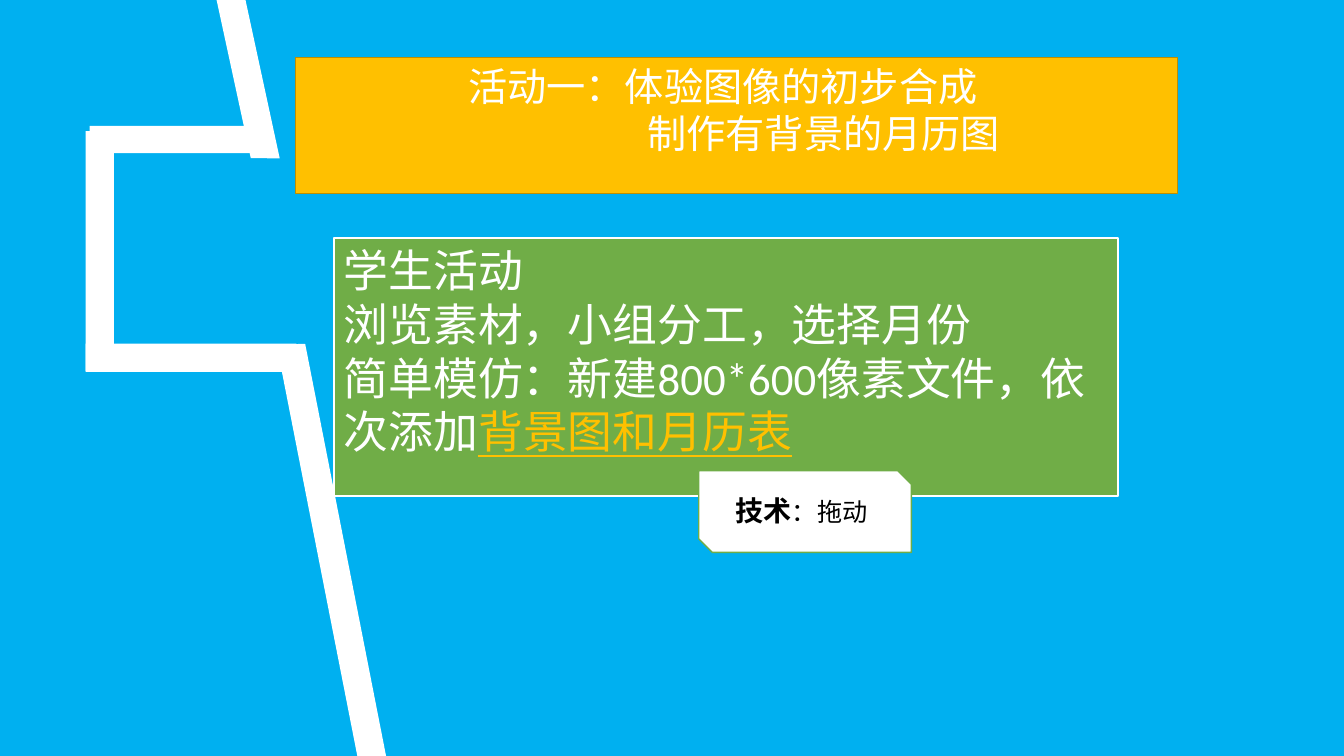
from pptx import Presentation
from pptx.dml.color import RGBColor
from pptx.enum.shapes import MSO_SHAPE
from pptx.enum.text import MSO_ANCHOR, PP_ALIGN
from pptx.util import Inches, Pt

COLORS = {
    "sky": "00B0F0",
    "white": "FFFFFF",
    "black": "000000",
    "gold": "FFC000",
    "gold_edge": "BD8E00",
    "green": "70AD47",
}

ROAD = [
    (MSO_SHAPE.RECTANGLE, (0.89, 1.25, 1.76, 0.27), 0, None),
    (MSO_SHAPE.PARALLELOGRAM, (1.62, 0.64, 1.68, 0.28), 77.8, 0.23),
    (MSO_SHAPE.RECTANGLE, (-0.2, 2.35, 2.38, 0.28), 90, None),
    (MSO_SHAPE.PARALLELOGRAM, (1.16, 5.34, 4.26, 0.28), 78.9, 0.18),
    (MSO_SHAPE.RECTANGLE, (0.85, 3.41, 2.09, 0.28), 0, None),
]


def rgb(name):
    return RGBColor.from_string(COLORS[name])


def add_panel(shapes, kind, box, fill, line=None, width=1):
    sp = shapes.add_shape(kind, *map(Inches, box))
    sp.shadow.inherit = False
    sp.fill.solid()
    sp.fill.fore_color.rgb = rgb(fill)
    if line:
        sp.line.color.rgb = rgb(line)
        sp.line.width = Pt(width)
    else:
        sp.line.fill.background()
    return sp


def add_road(shapes):
    for kind, box, angle, slant in ROAD:
        sp = add_panel(shapes, kind, box, "white")
        sp.rotation = angle
        if slant is not None:
            sp.adjustments[0] = slant


def write_lines(tf, lines, size, color, align, font="Calibri"):
    tf.word_wrap = True
    tf.vertical_anchor = MSO_ANCHOR.TOP
    for i, text in enumerate(lines):
        p = tf.paragraphs[0] if i == 0 else tf.add_paragraph()
        p.alignment = align
        p.font.name = font
        p.font.size = Pt(size)
        p.font.color.rgb = rgb(color)
        p.add_run().text = text


def add_title(shapes):
    sp = add_panel(shapes, MSO_SHAPE.RECTANGLE, (2.93, 0.57, 8.75, 1.35),
                   "gold", "gold_edge")
    tf = sp.text_frame
    tf.margin_right = Inches(0.37)
    write_lines(tf, ["活动一：体验图像的初步合成", "制作有背景的月历图"],
                28, "white", PP_ALIGN.CENTER)
    pPr = tf.paragraphs[1]._p.get_or_add_pPr()
    pPr.set("marL", str(Inches(2)))


def add_activity(shapes):
    sp = add_panel(shapes, MSO_SHAPE.RECTANGLE, (3.31, 2.36, 7.78, 2.56),
                   "green", "white", 1.5)
    tf = sp.text_frame
    write_lines(tf, ["学生活动", "浏览素材，小组分工，选择月份",
                     "简单模仿：新建800*600像素文件，依次添加"],
                32, "white", PP_ALIGN.LEFT)
    r = tf.paragraphs[-1].add_run()
    r.text = "背景图和月历表"
    r.font.color.rgb = rgb("gold")
    r.font.underline = True


def add_technique(shapes):
    group = shapes.add_group_shape()
    add_panel(group.shapes, MSO_SHAPE.SNIP_2_DIAG_RECTANGLE,
              (6.93, 4.67, 2.11, 0.81), "white", "green")
    label = group.shapes.add_textbox(*map(Inches, (7.2, 4.85, 1.57, 0.44)))
    tf = label.text_frame
    write_lines(tf, ["技术"], 18, "black", PP_ALIGN.LEFT, "Arial")
    p = tf.paragraphs[0]
    p.runs[0].font.size = Pt(20)
    p.runs[0].font.bold = True
    p.add_run().text = "：拖动"


def main():
    prs = Presentation()
    prs.slide_width = Inches(13.33)
    prs.slide_height = Inches(7.5)
    s = prs.slides.add_slide(prs.slide_layouts[6])
    s.background.fill.solid()
    s.background.fill.fore_color.rgb = rgb("sky")
    add_road(s.shapes)
    add_title(s.shapes)
    add_activity(s.shapes)
    add_technique(s.shapes)
    prs.save("out.pptx")


if __name__ == "__main__":
    main()
